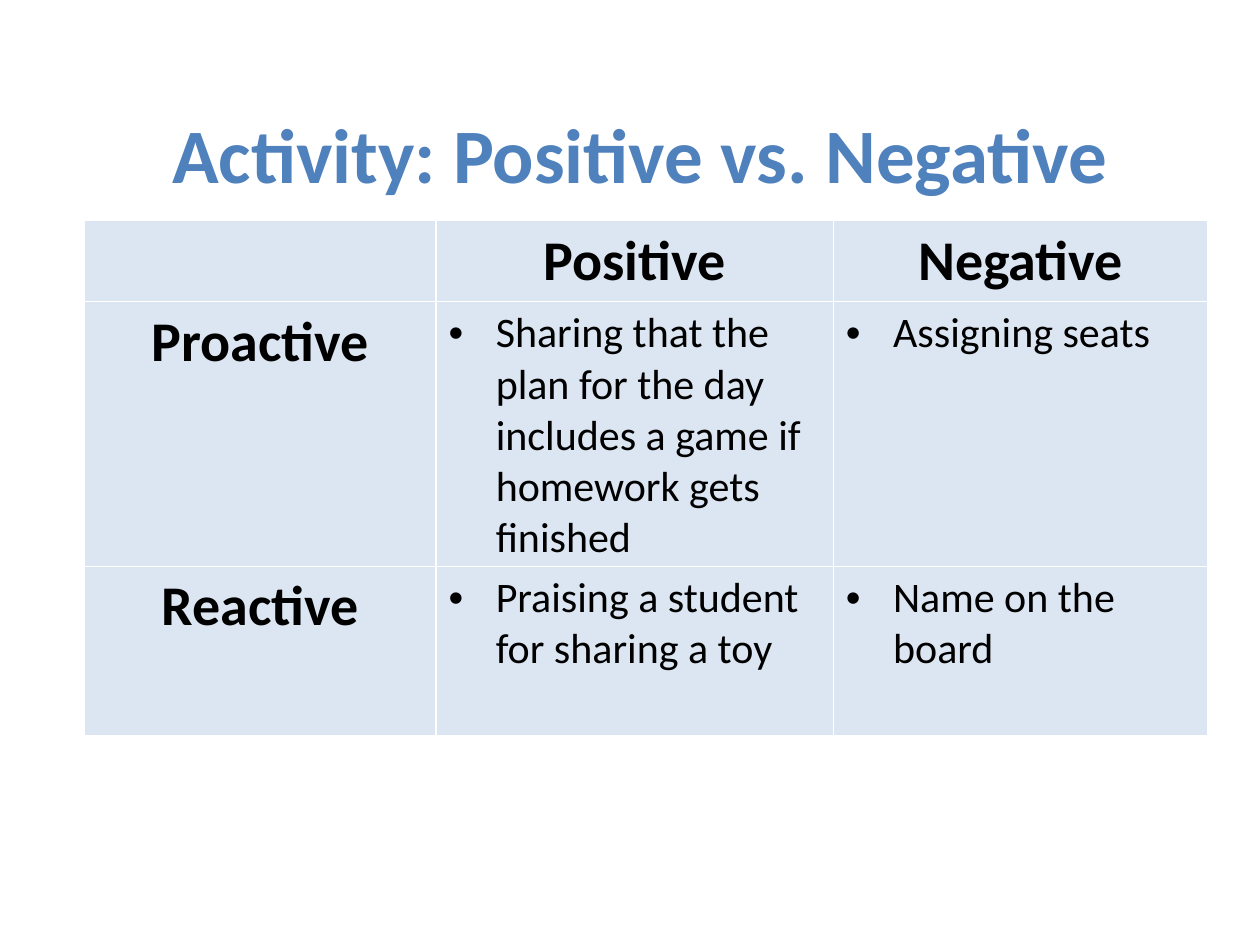
"""Build a slide with a table of positive and negative classroom actions."""
from lxml import etree
from pptx import Presentation
from pptx.dml.color import RGBColor
from pptx.enum.text import MSO_ANCHOR, PP_ALIGN
from pptx.oxml.ns import qn
from pptx.util import Cm, Pt

MIDDLE = MSO_ANCHOR.MIDDLE
CENTER = PP_ALIGN.CENTER

TITLE = "Activity: Positive vs. Negative"
ROWS = [
    ("", "Positive", "Negative"),
    ("Proactive",
     "Sharing that the plan for the day includes a game if homework gets finished",
     "Assigning seats"),
    ("Reactive", "Praising a student for sharing a toy", "Name on the board"),
]
WIDTHS = (7.09, 8.01, 7.55)
HEIGHTS = (1.63, 4.9, 3.42)
INDENT = Cm(0.95)
COLORS = {"title": "4F81BD", "text": "000000", "cell": "DCE6F2"}


def style(para, size, bold, color):
    font = para.font
    font.name = "Calibri"
    font.size = Pt(size)
    font.bold = bold
    font.color.rgb = RGBColor.from_string(COLORS[color])


def bullet(para):
    props = para._p.get_or_add_pPr()
    props.set("marL", str(INDENT))
    props.set("indent", str(-INDENT))
    etree.SubElement(props, qn("a:buFont"), typeface="Arial")
    etree.SubElement(props, qn("a:buChar"), char="•")


def add_title(slide):
    box = slide.shapes.add_textbox(Cm(1.48), Cm(1.48), Cm(22.86), Cm(3.18))
    frame = box.text_frame
    frame.word_wrap = True
    frame.vertical_anchor = MIDDLE
    para = frame.paragraphs[0]
    para.text = TITLE
    para.alignment = CENTER
    style(para, 44, True, "title")


def add_grid(slide):
    table = slide.shapes.add_table(
        len(ROWS), len(WIDTHS), Cm(1.7), Cm(4.45),
        Cm(sum(WIDTHS)), Cm(sum(HEIGHTS))).table
    table.horz_banding = False
    for col, width in zip(table.columns, WIDTHS):
        col.width = Cm(width)
    for row, height in zip(table.rows, HEIGHTS):
        row.height = Cm(height)
    for r, texts in enumerate(ROWS):
        for c, text in enumerate(texts):
            cell = table.cell(r, c)
            cell.fill.solid()
            cell.fill.fore_color.rgb = RGBColor.from_string(COLORS["cell"])
            para = cell.text_frame.paragraphs[0]
            para.text = text
            head = r == 0 or c == 0
            if head:
                para.alignment = CENTER
            else:
                bullet(para)
            style(para, 32 if head else 24, head, "text")


def main():
    deck = Presentation()
    deck.slide_width = Cm(25.4)
    deck.slide_height = Cm(19.05)
    slide = deck.slides.add_slide(deck.slide_layouts[6])
    add_title(slide)
    add_grid(slide)
    deck.save("out.pptx")


if __name__ == "__main__":
    main()
